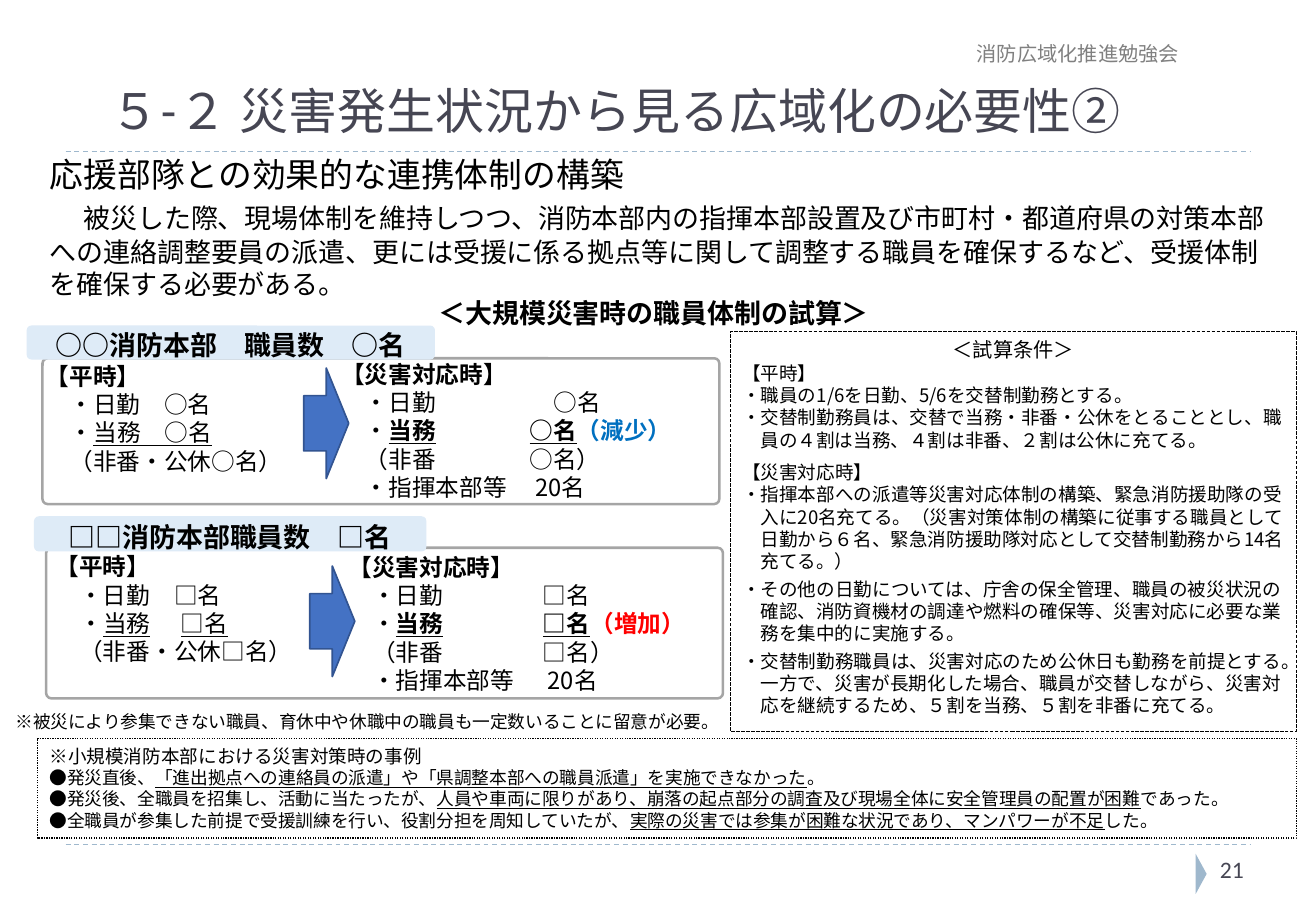
import dataclasses
import typing

import lxml.etree
import pptx
import pptx.dml.color
import pptx.enum.dml
import pptx.enum.shapes
import pptx.enum.text
import pptx.oxml.ns
import pptx.util

SCALE = 9144
SHAPES = pptx.enum.shapes.MSO_SHAPE
DASHES = pptx.enum.dml.MSO_LINE
ANCHORS = pptx.enum.text.MSO_ANCHOR
CENTER = pptx.enum.text.PP_ALIGN.CENTER


@dataclasses.dataclass(frozen=True)
class Theme:
    sans: str = "Noto Sans CJK JP"
    latin: str = "Calibri"
    heading: str = "Roboto Slab"
    black: str = "000000"
    white: str = "FFFFFF"
    slate: str = "464653"
    gray: str = "808080"
    rule: str = "9FB8CD"
    panel: str = "A5A5A5"
    label: str = "DEEBF7"
    arrow: str = "4472C4"
    arrow_edge: str = "325491"
    decrease: str = "0070C0"
    increase: str = "FF0000"
    title_size: float = 29
    lead_size: float = 20
    body_size: float = 16
    staff_size: float = 14
    note_size: float = 12
    small_size: float = 11
    tiny_size: float = 10.5
    leading: float = 1.2


THEME = Theme()


@dataclasses.dataclass
class Run:
    text: str
    bold: bool = False
    underline: bool = False
    color: str = THEME.black
    size: float = 0


@dataclasses.dataclass
class Paragraph:
    runs: list
    size: float
    font: str = THEME.sans
    align: typing.Any = None
    hanging: int = 0
    before: float = 0
    after: float = 0
    tab: int = 0


@dataclasses.dataclass
class Station:
    box: tuple
    label_box: tuple
    normal_box: tuple
    response_box: tuple
    arrow_box: tuple
    label: str
    mark: str
    duty: str
    change: Run
    tabs: tuple
    normal_tab: int


def px(value):
    return pptx.util.Emu(round(value * SCALE))


def place(box, part):
    return (box[0] + part[0], box[1] + part[1], part[2], part[3])


def color_of(value):
    return pptx.dml.color.RGBColor.from_string(value)


def write(shape, paragraphs, anchor=ANCHORS.TOP, wrap=True, insets=(10, 5, 10, 5)):
    frame = shape.text_frame
    frame.word_wrap = wrap
    frame.vertical_anchor = anchor
    frame.margin_left, frame.margin_top, frame.margin_right, frame.margin_bottom = map(px, insets)
    for index, item in enumerate(paragraphs):
        paragraph = frame.paragraphs[0] if index == 0 else frame.add_paragraph()
        paragraph.alignment = item.align or pptx.enum.text.PP_ALIGN.LEFT
        paragraph.space_before = pptx.util.Pt(item.before)
        paragraph.space_after = pptx.util.Pt(item.after)
        if item.font == THEME.sans:
            paragraph.line_spacing = pptx.util.Pt(round(item.size * THEME.leading, 1))
        properties = paragraph._p.get_or_add_pPr()
        if item.hanging:
            properties.set("marL", str(px(item.hanging)))
            properties.set("indent", str(px(-item.hanging)))
        if item.tab:
            stops = lxml.etree.SubElement(properties, pptx.oxml.ns.qn("a:tabLst"))
            lxml.etree.SubElement(stops, pptx.oxml.ns.qn("a:tab"), pos=str(px(item.tab)), algn="l")
        for part in item.runs:
            run = paragraph.add_run()
            run.text = part.text
            run.font.size = pptx.util.Pt(part.size or item.size)
            run.font.name = item.font
            run.font.bold = part.bold
            run.font.underline = part.underline
            run.font.color.rgb = color_of(part.color)
            east_asian = lxml.etree.SubElement(run._r.get_or_add_rPr(), pptx.oxml.ns.qn("a:ea"))
            east_asian.set("typeface", item.font)


def add_text(slide, box, paragraphs, **options):
    shape = slide.shapes.add_textbox(*map(px, box))
    write(shape, paragraphs, **options)


def add_block(slide, kind, box, fill=None, line=None, width=0.75, dash=None, corner=None):
    shape = slide.shapes.add_shape(kind, *map(px, box))
    shape.shadow.inherit = False
    if fill:
        shape.fill.solid()
        shape.fill.fore_color.rgb = color_of(fill)
    else:
        shape.fill.background()
    if line:
        shape.line.color.rgb = color_of(line)
        shape.line.width = pptx.util.Pt(width)
        shape.line.dash_style = dash
    else:
        shape.line.fill.background()
    if corner is not None:
        shape.adjustments[0] = corner
    return shape


def add_page_frame(slide, box):
    left, top, width, height = box
    for y in (top, top + height):
        rule = slide.shapes.add_connector(pptx.enum.shapes.MSO_CONNECTOR.STRAIGHT, px(left), px(y), px(left + width), px(y))
        rule.line.color.rgb = color_of(THEME.rule)
        rule.line.width = pptx.util.Pt(0.75)
        rule.line.dash_style = DASHES.DASH
        lxml.etree.SubElement(rule._element.spPr, pptx.oxml.ns.qn("a:effectLst"))
    marker = add_block(slide, SHAPES.ISOSCELES_TRIANGLE, place(box, (918, 590, 33, 9)), THEME.rule)
    marker.rotation = 90
    title = Run("５-２ 災害発生状況から見る広域化の必要性②", color=THEME.slate)
    add_text(slide, place(box, (27, -84, 906, 79)), [Paragraph([title], THEME.title_size, THEME.heading)], anchor=ANCHORS.BOTTOM)
    meeting = Run("消防広域化推進勉強会", color=THEME.gray)
    add_text(slide, place(box, (740, -96, 213, 30)), [Paragraph([meeting], THEME.note_size, THEME.latin)])
    number = Run("21", color=THEME.slate)
    add_text(slide, place(box, (940, 574, 77, 40)), [Paragraph([number], THEME.staff_size, THEME.latin)])


def add_introduction(slide, box):
    body = "被災した際、現場体制を維持しつつ、消防本部内の指揮本部設置及び市町村・都道府県の対策本部への連絡調整要員の派遣、更には受援に係る拠点等に関して調整する職員を確保するなど、受援体制を確保する必要がある。"
    add_text(slide, box, [
        Paragraph([Run("応援部隊との効果的な連携体制の構築")], THEME.lead_size, THEME.latin),
        Paragraph([Run("　", size=THEME.lead_size), Run(body)], THEME.body_size, THEME.latin),
    ])
    heading = Run("＜大規模災害時の職員体制の試算＞", bold=True)
    add_text(slide, place(box, (320, 117, 382, 37)), [Paragraph([heading], THEME.body_size)], wrap=False)


def add_station(slide, station):
    box, mark = station.box, station.mark
    add_block(slide, SHAPES.ROUNDED_RECTANGLE, box, line=THEME.panel, width=1.5, corner=0.035)
    label = add_block(slide, SHAPES.ROUNDED_RECTANGLE, place(box, station.label_box), THEME.label, corner=0.139)
    write(label, [Paragraph([Run(station.label, bold=True)], THEME.body_size, align=CENTER)],
          anchor=ANCHORS.MIDDLE, insets=(10, 4, 10, 0))
    normal = [
        [Run("【平時】", bold=True)],
        [Run(f"　・日勤　{mark}名")],
        [Run("　・"), Run(station.duty, underline=True)],
        [Run(f"　（非番・公休{mark}名）")],
    ]
    add_text(slide, place(box, station.normal_box),
             [Paragraph(runs, THEME.staff_size, tab=station.normal_tab) for runs in normal], anchor=ANCHORS.BOTTOM)
    day, shift, command = station.tabs
    response = [
        ([Run("【災害対応時】", bold=True)], 0),
        ([Run(f"　・日勤\t{mark}名")], day),
        ([Run("　・"), Run(f"当務\t{mark}名", bold=True, underline=True), station.change], shift),
        ([Run(f"　（非番\t{mark}名）")], shift),
        ([Run("　・指揮本部等\t20名")], command),
    ]
    add_text(slide, place(box, station.response_box),
             [Paragraph(runs, THEME.staff_size, tab=tab) for runs, tab in response])
    add_block(slide, SHAPES.RIGHT_ARROW, place(box, station.arrow_box), THEME.arrow, THEME.arrow_edge, 1)


def add_cases(slide, box):
    cases = [
        ("●発災直後、", "「進出拠点への連絡員の派遣」や「県調整本部への職員派遣」を実施できなかった", "。"),
        ("●発災後、全職員を招集し、活動に当たったが、", "人員や車両に限りがあり、崩落の起点部分の調査及び現場全体に安全管理員の配置が困難", "であった。"),
        ("●全職員が参集した前提で受援訓練を行い、役割分担を周知していたが、", "実際の災害では参集が困難な状況であり、マンパワーが不足", "した。"),
    ]
    paragraphs = [Paragraph([Run("※小規模消防本部における災害対策時の事例")], THEME.small_size)]
    for start, stressed, end in cases:
        paragraphs.append(Paragraph([Run(start), Run(stressed, underline=True), Run(end)], THEME.tiny_size, hanging=17))
    write(add_block(slide, SHAPES.RECTANGLE, box, THEME.white, THEME.black, dash=DASHES.ROUND_DOT), paragraphs)


def add_conditions(slide, box):
    conditions = [
        ("【平時】", 0, 0),
        ("・職員の1/6を日勤、5/6を交替制勤務とする。", 0, 0),
        ("・交替制勤務員は、交替で当務・非番・公休をとることとし、職員の４割は当務、４割は非番、２割は公休に充てる。", 0, 0),
        ("【災害対応時】", 6, 0),
        ("・指揮本部への派遣等災害対応体制の構築、緊急消防援助隊の受入に20名充てる。（災害対策体制の構築に従事する職員として日勤から６名、緊急消防援助隊対応として交替制勤務から14名充てる。）", 0, 3),
        ("・その他の日勤については、庁舎の保全管理、職員の被災状況の確認、消防資機材の調達や燃料の確保等、災害対応に必要な業務を集中的に実施する。", 0, 3),
        ("・交替制勤務職員は、災害対応のため公休日も勤務を前提とする。", 0, 0),
        ("　一方で、災害が長期化した場合、職員が交替しながら、災害対応を継続するため、５割を当務、５割を非番に充てる。", 0, 3),
    ]
    paragraphs = [Paragraph([Run("＜試算条件＞")], THEME.note_size, align=CENTER, hanging=18)]
    for text, before, after in conditions:
        paragraphs.append(Paragraph([Run(text)], THEME.small_size, hanging=15, before=before, after=after))
    write(add_block(slide, SHAPES.RECTANGLE, box, THEME.white, THEME.black, dash=DASHES.SQUARE_DOT), paragraphs)


def add_caution(slide, box):
    caution = Run("※被災により参集できない職員、育休中や休職中の職員も一定数いることに留意が必要。")
    add_text(slide, box, [Paragraph([caution], THEME.tiny_size, hanging=10)])


def main():
    presentation = pptx.Presentation()
    presentation.slide_width, presentation.slide_height = px(1083), px(750)
    slide = presentation.slides.add_slide(presentation.slide_layouts[6])
    add_page_frame(slide, (54, 125, 975, 570))
    add_introduction(slide, (31, 122, 1029, 151))
    add_station(slide, Station(
        (35, 295, 557, 120), (-13, -27, 336, 28), (-7, -3, 259, 104), (236, -4, 333, 128), (215, 8, 37, 91),
        "○○消防本部　職員数　○名", "○", "当務　○名",
        Run("（減少）", bold=True, color=THEME.decrease), (175, 155, 160), 0))
    add_station(slide, Station(
        (38, 451, 557, 124), (-10, -26, 323, 29), (-2, -2, 259, 104), (239, -1, 323, 128), (217, 15, 37, 91),
        "□□消防本部職員数　□名", "□", "当務\t□名",
        Run("（増加）", bold=True, color=THEME.increase), (160, 160, 164), 103))
    add_cases(slide, (31, 608, 1036, 82))
    add_conditions(slide, (601, 273, 466, 329))
    add_caution(slide, (3, 580, 598, 28))
    presentation.save("out.pptx")


if __name__ == "__main__":
    main()
